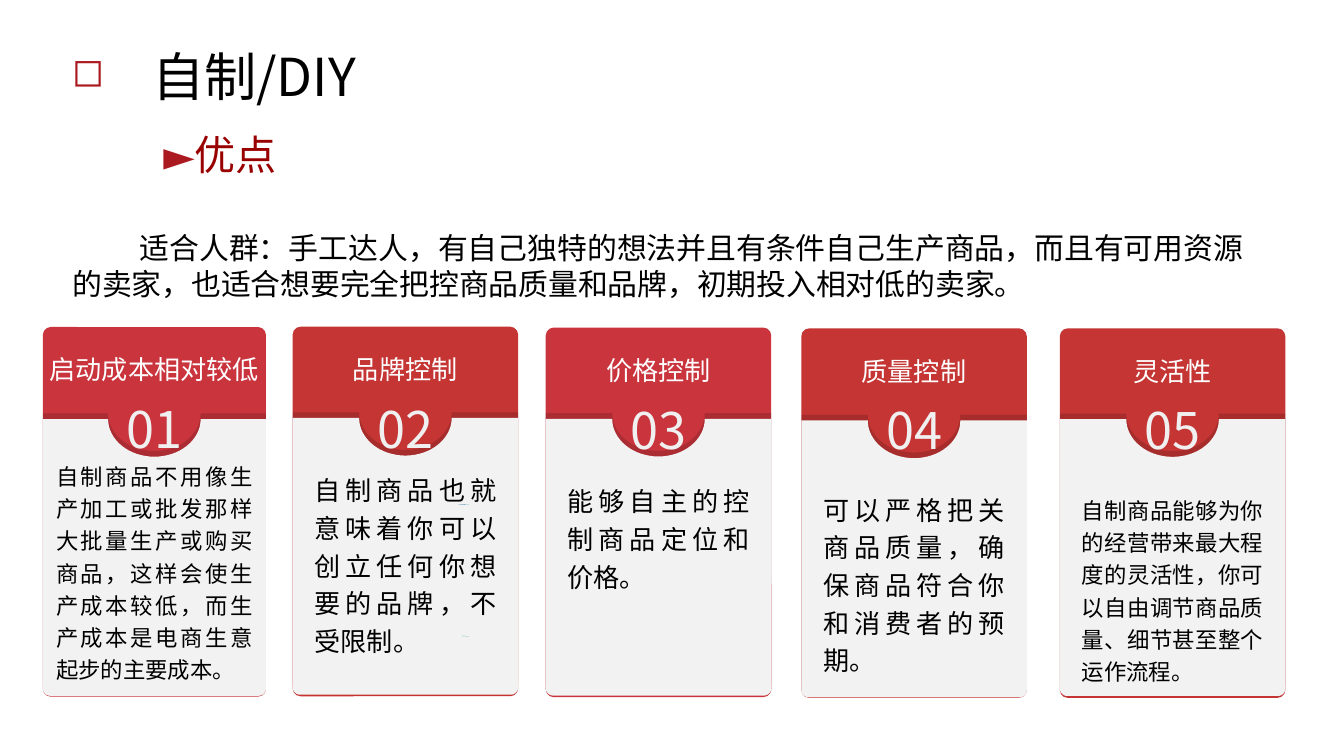
from dataclasses import dataclass
from math import cos, radians, sin

from lxml.etree import SubElement
from pptx import Presentation
from pptx.dml.color import RGBColor
from pptx.enum.shapes import MSO_SHAPE
from pptx.enum.text import MSO_ANCHOR, MSO_AUTO_SIZE, PP_ALIGN
from pptx.oxml.ns import qn
from pptx.util import Pt


@dataclass(frozen=True)
class Theme:
    font: str = "Noto Sans CJK SC"
    ink: str = "000000"
    accent: str = "AC1A21"
    subtitle: str = "990000"
    header_text: str = "FFFFFF"
    number: str = "F0F0F0"
    panel: str = "F2F2F2"
    crimson: str = "C9343D"
    brick: str = "C43534"
    title_size: float = 28
    number_size: float = 27
    subtitle_size: float = 22
    intro_size: float = 16
    body_size: float = 14
    small_size: float = 12


@dataclass(frozen=True)
class Card:
    title: str
    body: str
    body_size: float
    fill: str
    left: float
    top: float
    width: float
    panel_top: float
    body_top: float
    body_height: float


THEME = Theme()
CARD_HEIGHT = 198
PANEL_HEIGHT = 148.3
BODY_WIDTH = 111.6
CARDS = [
    Card("启动成本相对较低",
         "自制商品不用像生产加工或批发那样大批量生产或购买商品，这样会使生产成本较低，而生产成本是电商生意起步的主要成本。",
         THEME.small_size, THEME.crimson, 23, 175.2, 119.5, 224.5, 241.7, 137.5),
    Card("品牌控制", "自制商品也就意味着你可以创立任何你想要的品牌，不受限制。",
         THEME.body_size, THEME.brick, 156.8, 175, 120.8, 223.9, 247.5, 28.8),
    Card("价格控制", "能够自主的控制商品定位和价格。",
         THEME.body_size, THEME.crimson, 292.4, 175.5, 120.8, 224.4, 253.4, 68.4),
    Card("质量控制", "可以严格把关商品质量，确保商品符合你和消费者的预期。",
         THEME.body_size, THEME.brick, 429.3, 175.9, 120.8, 225.3, 257.8, 74.2),
    Card("灵活性",
         "自制商品能够为你的经营带来最大程度的灵活性，你可以自由调节商品质量、细节甚至整个运作流程。",
         THEME.small_size, THEME.brick, 567.8, 175.9, 120.8, 224.6, 259.9, 90.7),
]
SLIVERS = [(245.7, 270.2, "4276AA"), (247.6, 270.2, "178AA1"), (247.6, 340.7, "40A693")]


def arc(center_x, center_y, radius_x, radius_y, start, end, steps):
    """Points along an elliptical arc, angles in degrees, clockwise on the page."""
    angles = [radians(start + (end - start) * i / steps) for i in range(steps + 1)]
    return [(center_x + radius_x * cos(a), center_y + radius_y * sin(a)) for a in angles]


class SlideBuilder:
    def __init__(self, slide, theme):
        self.theme = theme
        self.slide = slide
        self.shapes = slide.shapes

    def style(self, span, size, color):
        font = span.font
        font.size = Pt(size)
        font.color.rgb = RGBColor.from_string(color)
        font.name = self.theme.font
        SubElement(span._r.get_or_add_rPr(), qn("a:ea"), typeface=self.theme.font)

    def paint(self, shape, color):
        shape.shadow.inherit = False
        shape.fill.solid()
        shape.fill.fore_color.rgb = RGBColor.from_string(color)
        shape.line.fill.background()

    def center(self, frame):
        """Centre one unwrapped line across the full width of its shape."""
        frame.word_wrap = False
        frame.margin_left = frame.margin_right = Pt(0)
        frame.paragraphs[0].alignment = PP_ALIGN.CENTER

    def text(self, content, left, top, width, height, size, color,
             align=PP_ALIGN.JUSTIFY, spacing=None):
        box = self.shapes.add_textbox(Pt(left), Pt(top), Pt(width), Pt(height))
        box.text_frame.word_wrap = True
        para = box.text_frame.paragraphs[0]
        para.text = content
        para.alignment = align
        if spacing:
            para.line_spacing = spacing
        self.style(para.runs[0], size, color)
        return box

    def indent(self, box, margin, first_line):
        properties = box.text_frame.paragraphs[0]._p.get_or_add_pPr()
        properties.set("marL", str(Pt(margin)))
        properties.set("indent", str(Pt(first_line)))
        return properties

    def title(self, content):
        box = self.text(content, 31.4, 20.2, 200.9, 41, self.theme.title_size,
                        self.theme.ink, align=PP_ALIGN.LEFT)
        box.text_frame.auto_size = MSO_AUTO_SIZE.SHAPE_TO_FIT_TEXT
        properties = self.indent(box, 43, -43)
        SubElement(SubElement(properties, qn("a:buClr")), qn("a:srgbClr"), val=self.theme.accent)
        SubElement(properties, qn("a:buSzPct"), val="75000")
        SubElement(properties, qn("a:buChar"), char="◻")

    def subtitle(self, marker, content):
        box = self.text(marker, 70.2, 62.2, 254.9, 35.3, self.theme.subtitle_size,
                        self.theme.accent, align=PP_ALIGN.LEFT, spacing=1.2)
        box.text_frame.margin_left = Pt(17.3)
        box.text_frame.vertical_anchor = MSO_ANCHOR.MIDDLE
        span = box.text_frame.paragraphs[0].add_run()
        span.text = content
        self.style(span, self.theme.subtitle_size, self.theme.subtitle)

    def intro(self, content):
        box = self.text(content, 31.7, 119.5, 642.2, 46, self.theme.intro_size, self.theme.ink)
        box.text_frame.auto_size = MSO_AUTO_SIZE.SHAPE_TO_FIT_TEXT
        self.indent(box, 0, 36)

    def outline(self, points, color):
        points = [(Pt(x), Pt(y)) for x, y in points]
        builder = self.shapes.build_freeform(*points[0])
        builder.add_line_segments(points[1:], close=True)
        shape = builder.convert_to_shape()
        self.paint(shape, color)
        return shape

    def header(self, card):
        shape = self.shapes.add_shape(MSO_SHAPE.ROUNDED_RECTANGLE, Pt(card.left), Pt(card.top),
                                      Pt(card.width), Pt(CARD_HEIGHT))
        shape.adjustments[0] = 0.035
        self.paint(shape, card.fill)
        frame = shape.text_frame
        frame.vertical_anchor = MSO_ANCHOR.TOP
        frame.margin_top = frame.margin_bottom = Pt(13)
        frame.text = card.title
        self.center(frame)
        self.style(frame.paragraphs[0].runs[0], self.theme.body_size, self.theme.header_text)

    def panel(self, card):
        """Light panel with a round bay in its top edge and a hard upward shadow."""
        left, right, top = card.left, card.left + card.width, card.panel_top
        bottom, corner = top + PANEL_HEIGHT, 4
        bay = arc(left + card.width / 2, top, 24.8, 20.2, 180, 0, 32)
        right_corner = arc(right - corner, bottom - corner, corner, corner, 0, 90, 6)
        left_corner = arc(left + corner, bottom - corner, corner, corner, 90, 180, 6)
        shape = self.outline([(left, top), *bay, (right, top), *right_corner, *left_corner],
                             self.theme.panel)
        effects = shape._element.spPr.find(qn("a:effectLst"))
        shadow = SubElement(effects, qn("a:outerShdw"), blurRad="0", dist=str(Pt(3)),
                            dir="16200000", algn="b", rotWithShape="0")
        black = SubElement(shadow, qn("a:srgbClr"), val="000000")
        SubElement(black, qn("a:alpha"), val="14000")

    def card(self, number, card):
        self.shapes = self.slide.shapes.add_group_shape().shapes
        middle = card.left + card.width / 2
        self.header(card)
        self.panel(card)
        label = self.text(f"{number:02}", middle - 20, card.top + 34.6, 40, 38.2,
                          self.theme.number_size, self.theme.number)
        self.center(label.text_frame)
        inset = 0 if number == 1 else (card.width - BODY_WIDTH) / 2
        self.text(card.body, card.left + inset, card.body_top, card.width - 2 * inset,
                  card.body_height, card.body_size, self.theme.ink, spacing=1.2)
        self.shapes = self.slide.shapes

    def sliver(self, left, top, color):
        corners = [(left, top), (left + 3.8, top), (left + 3.8, top + 0.15)]
        self.outline(corners, color).rotation = 183.8


def main():
    deck = Presentation()
    deck.slide_width, deck.slide_height = Pt(720), Pt(405)
    page = SlideBuilder(deck.slides.add_slide(deck.slide_layouts[6]), THEME)
    page.title("自制/DIY")
    page.subtitle("►", "优点")
    page.intro("适合人群：手工达人，有自己独特的想法并且有条件自己生产商品，而且有可用资源的卖家，"
               "也适合想要完全把控商品质量和品牌，初期投入相对低的卖家。")
    for number, card in enumerate(CARDS, start=1):
        page.card(number, card)
    for sliver in SLIVERS:
        page.sliver(*sliver)
    deck.save("out.pptx")


if __name__ == "__main__":
    main()
